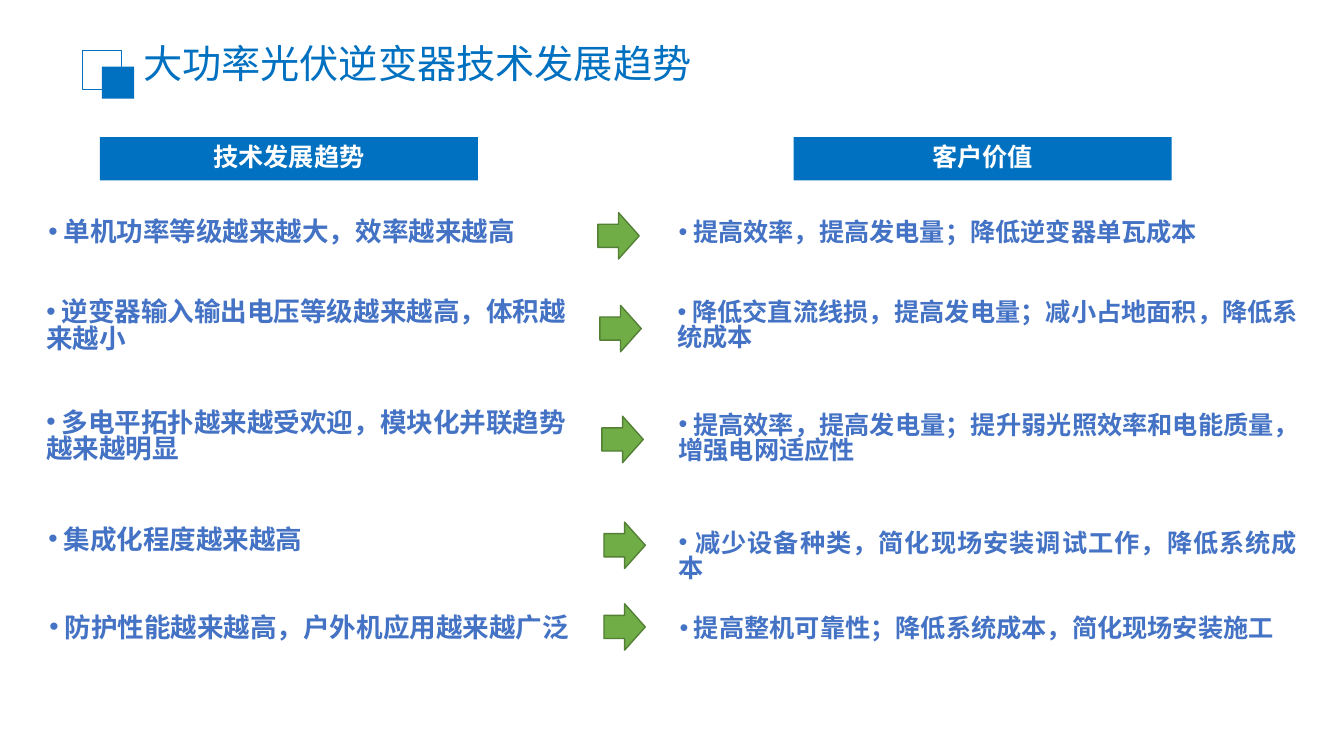
from lxml import etree
from pptx import Presentation
from pptx import util as u
from pptx.dml.color import RGBColor
from pptx.enum import shapes, text
from pptx.oxml.ns import qn

PX = 9144  # one hundredth of an inch
FONT = "Noto Sans CJK SC"
BLUE = RGBColor(0x00, 0x70, 0xC0)
TEXT_BLUE = RGBColor(0x44, 0x72, 0xC4)
GREEN = RGBColor(0x70, 0xAD, 0x47)
DARK_GREEN = RGBColor(0x53, 0x80, 0x35)
WHITE = RGBColor(0xFF, 0xFF, 0xFF)
LINE_SPACING = 0.83
INSETS = (13, 9, 13, 3)

# Each row: trend (left, top, width, height, text), arrow (left, top), value (as trend)
ROWS = [
    ((35, 210, 547, 45, "单机功率等级越来越大，效率越来越高"), (593, 211),
     (660, 211, 642, 43, "提高效率，提高发电量；降低逆变器单瓦成本")),
    ((33, 289, 547, 77, "逆变器输入输出电压等级越来越高，体积越来越小"), (595, 303),
     (659, 290, 642, 74, "降低交直流线损，提高发电量；减小占地面积，降低系统成本")),
    ((33, 399, 549, 77, "多电平拓扑越来越受欢迎，模块化并联趋势越来越明显"), (597, 413),
     (660, 402, 642, 74, "提高效率，提高发电量；提升弱光照效率和电能质量，增强电网适应性")),
    ((35, 515, 547, 45, "集成化程度越来越高"), (599, 518),
     (660, 519, 640, 74, "减少设备种类，简化现场安装调试工作，降低系统成本")),
    ((36, 602, 547, 45, "防护性能越来越高，户外机应用越来越广泛"), (599, 599),
     (661, 604, 640, 43, "提高整机可靠性；降低系统成本，简化现场安装施工")),
]


def px(*lengths):
    return [u.Emu(length * PX) for length in lengths]


def write(box, words, size, colour, bold=True, align=text.PP_ALIGN.LEFT,
          insets=INSETS, bullet=False):
    """Fill a shape's text frame with one formatted paragraph."""
    frame = box.text_frame
    frame.word_wrap = True
    frame.auto_size = text.MSO_AUTO_SIZE.NONE
    frame.vertical_anchor = text.MSO_ANCHOR.TOP
    (frame.margin_left, frame.margin_top,
     frame.margin_right, frame.margin_bottom) = px(*insets)
    para = frame.paragraphs[0]
    para.alignment = align
    para.line_spacing = LINE_SPACING
    para.space_before = u.Pt(0)
    if bullet:
        add_bullet(para)
    span = para.add_run()
    span.text = words
    span.font.size = u.Pt(size)
    span.font.bold = bold
    span.font.color.rgb = colour
    span.font.name = FONT
    east_asian = etree.SubElement(span.font._element, qn("a:ea"))
    east_asian.set("typeface", FONT)


def add_bullet(para):
    """Put a bullet in line with the text, so wrapped lines start below it."""
    properties = para._p.get_or_add_pPr()
    properties.set("marL", "0")
    properties.set("indent", "0")
    etree.SubElement(properties, qn("a:buFont")).set("typeface", "Arial")
    etree.SubElement(properties, qn("a:buChar")).set("char", "•")


def add_block(page, kind, place, fill=None, line=None, line_width=1):
    block = page.shapes.add_shape(kind, *px(*place))
    block.shadow.inherit = False
    if fill is None:
        block.fill.background()
    else:
        block.fill.solid()
        block.fill.fore_color.rgb = fill
    if line is None:
        block.line.fill.background()
    else:
        block.line.color.rgb = line
        block.line.width = u.Pt(line_width)
    return block


def add_title(page, words):
    rectangle = shapes.MSO_SHAPE.RECTANGLE
    add_block(page, rectangle, (82, 50, 39, 39), line=BLUE, line_width=0.75)
    add_block(page, rectangle, (101, 66, 32, 32), fill=BLUE)
    title = page.shapes.title
    title.left, title.top, title.width, title.height = px(132, 38, 759, 57)
    write(title, words, 28, BLUE, bold=False, insets=(10, 9, 10, 1))


def add_heading(page, left, words):
    bar = add_block(page, shapes.MSO_SHAPE.RECTANGLE, (left, 136, 375, 43), fill=BLUE)
    write(bar, words, 18, WHITE, align=text.PP_ALIGN.CENTER)


def add_point(page, point, size, align):
    *place, words = point
    box = page.shapes.add_textbox(*px(*place))
    write(box, " " + words, size, TEXT_BLUE, align=align, bullet=True)


def add_row(page, trend, arrow, value):
    add_point(page, trend, 19, text.PP_ALIGN.LEFT)
    add_block(page, shapes.MSO_SHAPE.RIGHT_ARROW, (*arrow, 41, 46),
              fill=GREEN, line=DARK_GREEN)
    add_point(page, value, 18, text.PP_ALIGN.JUSTIFY)


def main():
    deck = Presentation()
    deck.slide_width, deck.slide_height = px(1333, 750)
    page = deck.slides.add_slide(deck.slide_layouts[5])
    add_title(page, "大功率光伏逆变器技术发展趋势")
    add_heading(page, 99, "技术发展趋势")
    add_heading(page, 787, "客户价值")
    for row in ROWS:
        add_row(page, *row)
    deck.save("out.pptx")


if __name__ == "__main__":
    main()
